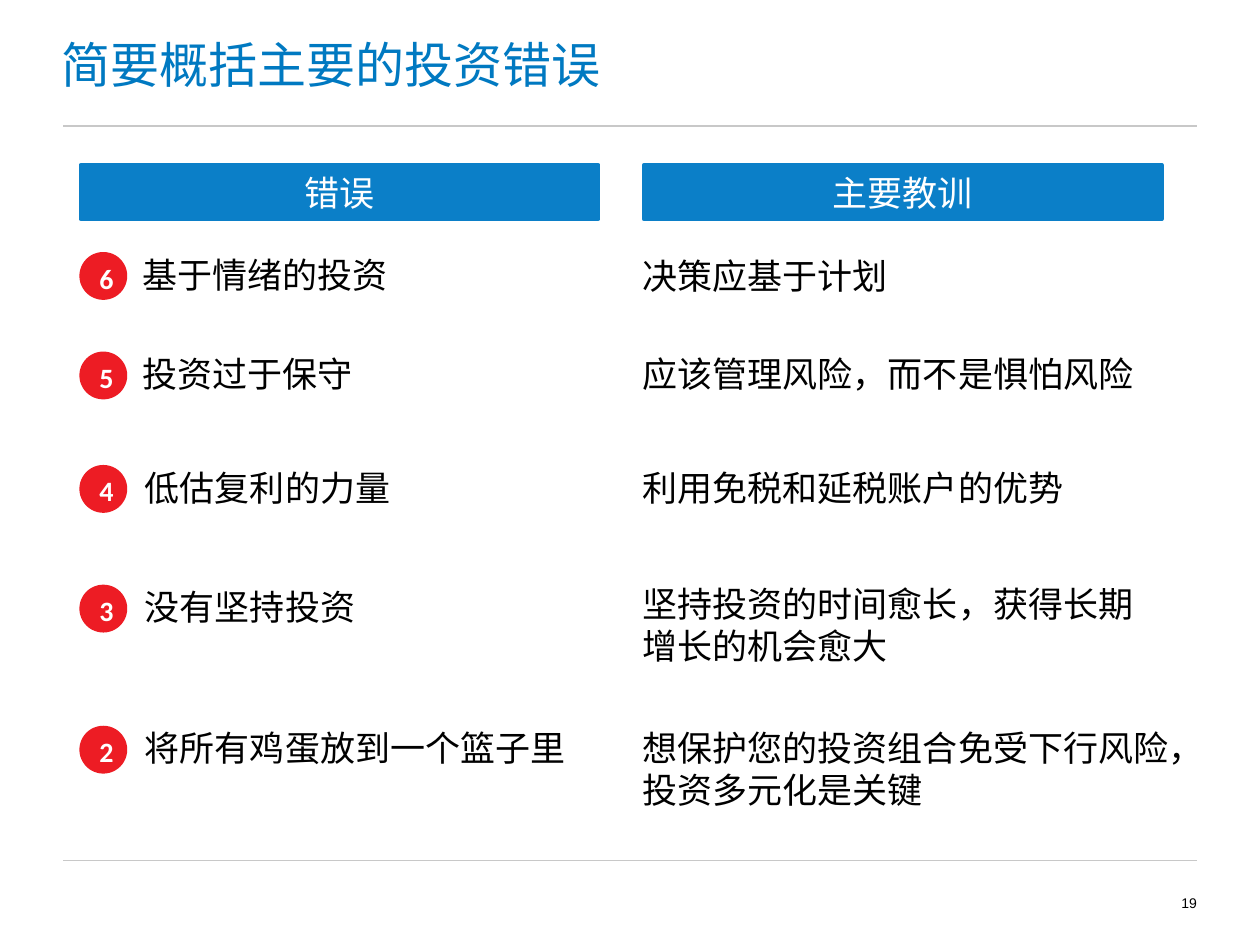
from dataclasses import dataclass

from lxml import etree
from pptx import Presentation
from pptx.dml.color import RGBColor
from pptx.enum.shapes import MSO_CONNECTOR, MSO_SHAPE
from pptx.enum.text import MSO_ANCHOR, PP_ALIGN
from pptx.oxml.ns import qn
from pptx.util import Inches, Pt

LEFT, CENTER, RIGHT = PP_ALIGN.LEFT, PP_ALIGN.CENTER, PP_ALIGN.RIGHT
TOP, MIDDLE = MSO_ANCHOR.TOP, MSO_ANCHOR.MIDDLE
RECTANGLE, OVAL = MSO_SHAPE.RECTANGLE, MSO_SHAPE.OVAL
STRAIGHT = MSO_CONNECTOR.STRAIGHT

WIDTH, HEIGHT = Inches(10), Inches(7.5)
COLUMNS, ROWS = 100, 75
BLUE, TITLE_BLUE, RED = "0B7FC8", "0079C1", "ED1C24"
GREY, BLACK, WHITE = "C8C8C8", "000000", "FFFFFF"
NO_INSETS = (0, 0, 0, 0)
TEXT_INSETS = (0.9, 0.5, 0.9, 0.5)
BADGE_INSETS = (0.5, 0.3, 0, 0)
BADGE_SIZE = 3.8


@dataclass
class Box:
    left: float
    top: float
    width: float
    height: float


@dataclass
class Mistake:
    number: str
    name: str
    lesson: str
    name_left: float
    name_top: float
    lesson_top: float
    lesson_height: float = 4.3


@dataclass
class Heading:
    label: str
    left: float


MISTAKES = [
    Mistake("6", "基于情绪的投资", "决策应基于计划", 10.4, 19.6, 19.7),
    Mistake("5", "投资过于保守", "应该管理风险，而不是惧怕风险", 10.4, 27.5, 27.5),
    Mistake("4", "低估复利的力量", "利用免税和延税账户的优势", 10.6, 36.5, 36.5),
    Mistake("3", "没有坚持投资", "坚持投资的时间愈长，获得长期\n增长的机会愈大",
            10.6, 46, 45.7, 7.7),
    Mistake("2", "将所有鸡蛋放到一个篮子里", "想保护您的投资组合免受下行风险，投资多元化是关键",
            10.6, 57.2, 57.2, 7.7),
]
HEADINGS = [Heading("错误", 6.4), Heading("主要教训", 51.1)]


def color(value: str) -> RGBColor:
    return RGBColor.from_string(value)


def across(columns: float) -> int:
    return round(WIDTH * columns / COLUMNS)


def down(rows: float) -> int:
    return round(HEIGHT * rows / ROWS)


def frame(box: Box) -> tuple[int, int, int, int]:
    return across(box.left), down(box.top), across(box.width), down(box.height)


def write(shape, text: str, size: float, ink: str, align=LEFT, anchor=TOP,
          insets=TEXT_INSETS, bold=False, font="Calibri") -> None:
    text_frame = shape.text_frame
    text_frame.word_wrap = True
    text_frame.vertical_anchor = anchor
    left, top, right, bottom = insets
    text_frame.margin_left, text_frame.margin_right = across(left), across(right)
    text_frame.margin_top, text_frame.margin_bottom = down(top), down(bottom)
    paragraph = text_frame.paragraphs[0]
    paragraph.alignment = align
    for index, line in enumerate(text.split("\n")):
        if index:
            paragraph.add_line_break()
        run = paragraph.add_run()
        run.text = line
        run.font.name = font
        run.font.size = Pt(size)
        run.font.bold = bold
        run.font.color.rgb = color(ink)


def add_label(slide, box: Box, text: str, size: float = 20, **style) -> None:
    write(slide.shapes.add_textbox(*frame(box)), text, size, BLACK, **style)


def add_block(slide, preset, box: Box, fill: str, border: float = 0):
    block = slide.shapes.add_shape(preset, *frame(box))
    block.shadow.inherit = False
    block.fill.solid()
    block.fill.fore_color.rgb = color(fill)
    if border:
        block.line.color.rgb = color(fill)
        block.line.width = Pt(border)
    else:
        block.line.fill.background()
    return block


def add_rule(slide, row: float) -> None:
    rule = slide.shapes.add_connector(STRAIGHT, across(5), down(row), across(95), down(row))
    rule.line.color.rgb = color(GREY)
    rule.line.width = Pt(0.75)
    etree.SubElement(rule._element.spPr, qn("a:effectLst"))


def add_title(slide, text: str) -> None:
    title = slide.shapes.title
    title.left, title.top, title.width, title.height = frame(Box(4.9, 0.1, 90, 10))
    write(title, text, 28, TITLE_BLUE, anchor=MIDDLE, insets=NO_INSETS)


def add_heading(slide, heading: Heading) -> None:
    bar = add_block(slide, RECTANGLE, Box(heading.left, 13.1, 41.1, 4.3), BLUE, 2.25)
    write(bar, heading.label, 20, WHITE, align=CENTER)


def add_mistake(slide, mistake: Mistake) -> None:
    badge = add_block(
        slide, OVAL, Box(6.3, mistake.name_top + 0.4, BADGE_SIZE, BADGE_SIZE), RED)
    write(badge, mistake.number, 16, WHITE, align=CENTER, anchor=MIDDLE,
          insets=BADGE_INSETS, bold=True)
    add_label(slide, Box(mistake.name_left, mistake.name_top, 38.7, 4.3), mistake.name)
    add_label(slide, Box(50.1, mistake.lesson_top, 46.3, mistake.lesson_height),
              mistake.lesson)


def main() -> None:
    presentation = Presentation()
    presentation.slide_width, presentation.slide_height = WIDTH, HEIGHT
    slide = presentation.slides.add_slide(presentation.slide_layouts[5])
    add_title(slide, "简要概括主要的投资错误")
    for row in (10, 68.3):
        add_rule(slide, row)
    for heading in HEADINGS:
        add_heading(slide, heading)
    for mistake in MISTAKES:
        add_mistake(slide, mistake)
    add_label(slide, Box(90, 68.3, 5, 6.7), "19", 8, align=RIGHT, anchor=MIDDLE,
              insets=NO_INSETS, font="Arial")
    presentation.save("out.pptx")


if __name__ == "__main__":
    main()
